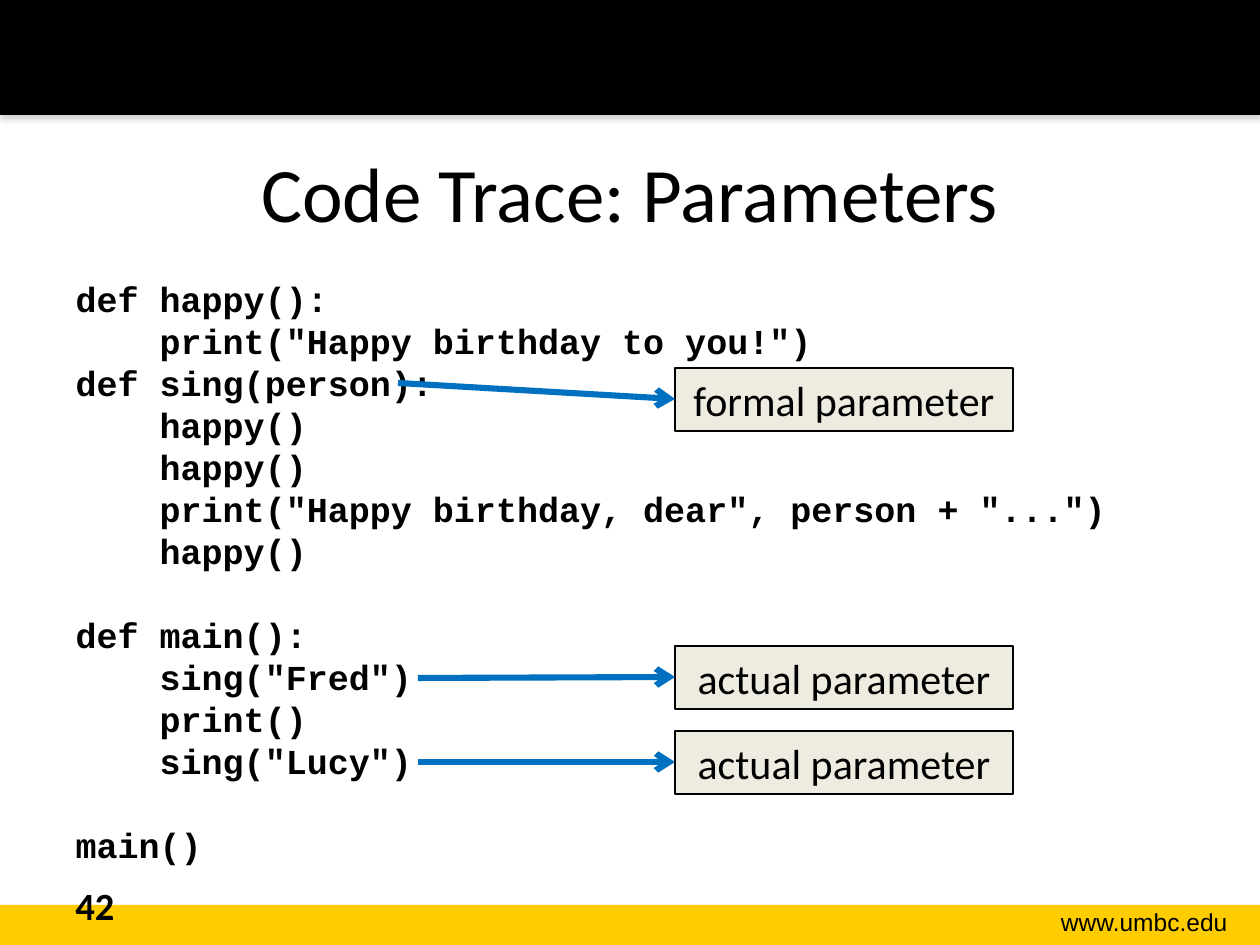
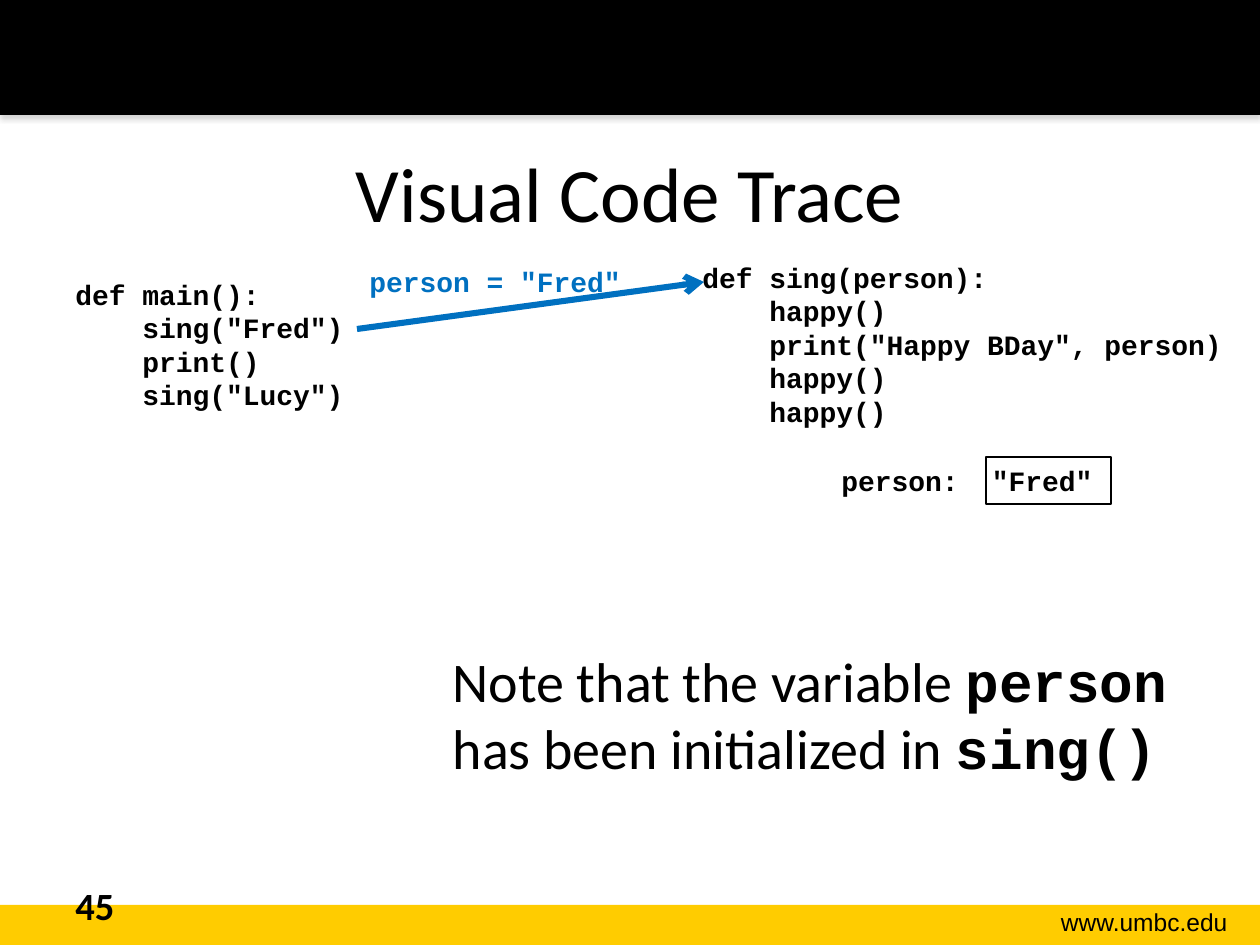
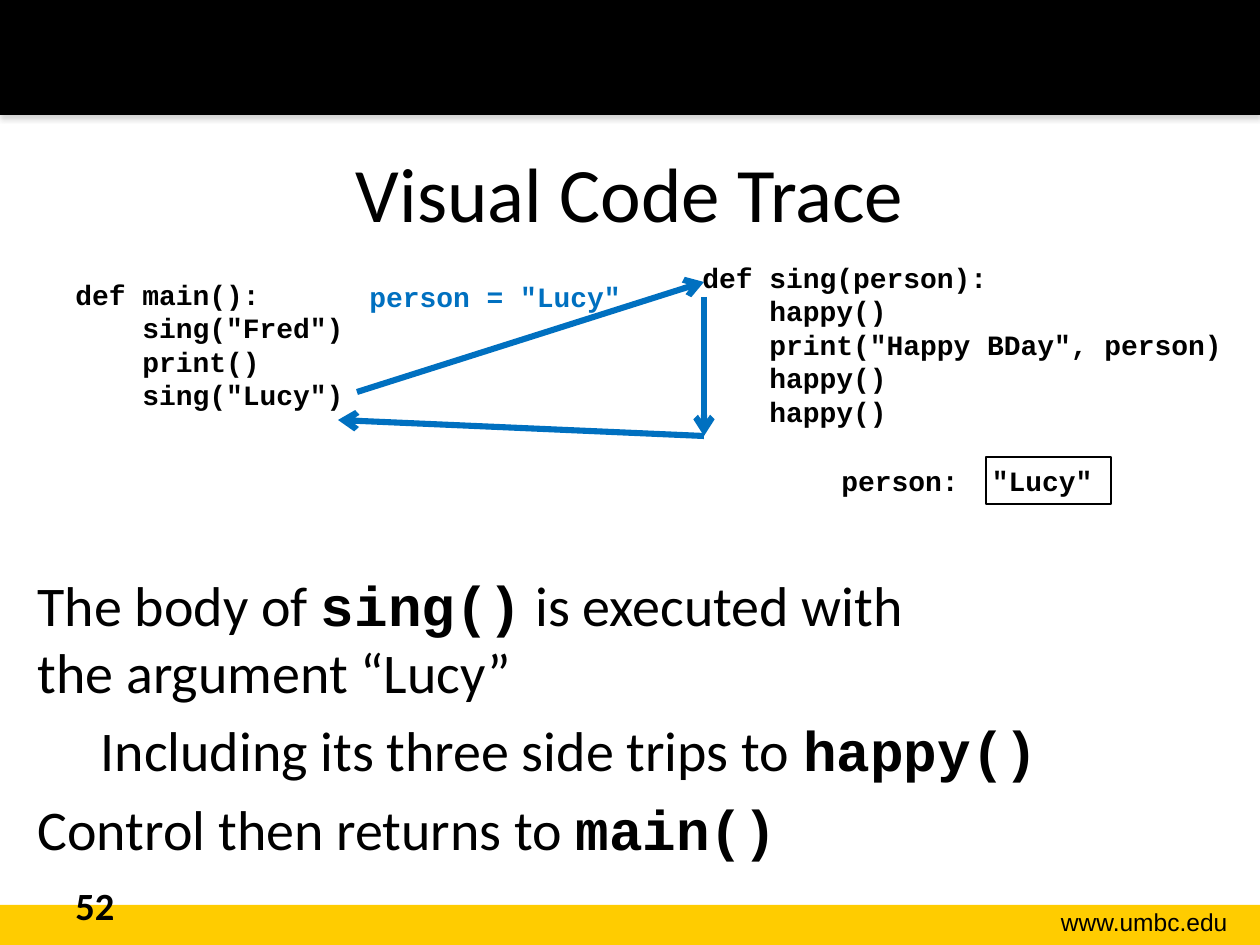
import dataclasses

import lxml.etree
import pptx
import pptx.dml.color
import pptx.enum.shapes
import pptx.enum.text
import pptx.oxml.ns
import pptx.util

ALIGN = pptx.enum.text.PP_ALIGN
ANCHOR = pptx.enum.text.MSO_ANCHOR
RECTANGLE = pptx.enum.shapes.MSO_SHAPE.RECTANGLE

BIRTHDAY_PROGRAM = '''def happy():
    print("Happy birthday to you!")
def sing(person):
    happy()
    happy()
    print("Happy birthday, dear", person + "...")
    happy()

def main():
    sing("Fred")
    print()
    sing("Lucy")

main()'''

MAIN_FUNCTION = '''def main():
    sing("Fred")
    print()
    sing("Lucy")'''

SING_FUNCTION = '''def sing(person):
    happy()
    print("Happy BDay", person)
    happy()
    happy()'''


@dataclasses.dataclass(frozen=True)
class Theme:
    ink: str = "000000"
    gold: str = "FFCC00"
    accent: str = "0070C0"
    label_fill: str = "EEECE1"
    shadow: str = "808080"
    text_font: str = "Calibri"
    code_font: str = "Courier New"
    footer_font: str = "Arial"
    title_size: int = 44
    body_size: int = 32
    label_size: int = 24
    number_size: int = 22
    program_size: int = 20
    code_size: int = 16
    footer_size: int = 14
    outline: float = 0.75
    arrow: float = 3.5


def px(length):
    return pptx.util.Emu(round(length * 914400 / 126))


def rgb(colour):
    return pptx.dml.color.RGBColor.from_string(colour)


def add_xml(parent, tag, **attributes):
    return lxml.etree.SubElement(parent, pptx.oxml.ns.qn(tag), attributes)


class Deck:
    """Draws the slides of a code trace in one shared style."""

    def __init__(self, theme):
        self.theme = theme
        self.presentation = pptx.Presentation()
        self.presentation.slide_width = px(1260)
        self.presentation.slide_height = px(945)
        self.slide = None

    def new_slide(self, title, number):
        first = self.slide is None
        layout = self.presentation.slide_layouts[1]
        self.slide = self.presentation.slides.add_slide(layout)
        if first:
            self.fill_master()
        heading = self.slide.shapes.title
        self.place(heading, 63, 113, 1134, 158)
        heading.text_frame.vertical_anchor = ANCHOR.MIDDLE
        heading.text_frame.text = title
        self.style(heading.text_frame.paragraphs[0], self.theme.title_size, align=ALIGN.CENTER)
        page = self.text_box(63, 876, 294, 50, str(number))
        self.style(page.paragraphs[0], self.theme.number_size, bold=True)

    def fill_master(self):
        theme = self.theme
        gold_band = self.rectangle(0, 905, 1260, 40, theme.gold)
        black_band = self.rectangle(0, 0, 1260, 115, theme.ink)
        effects = black_band.element.spPr.find(pptx.oxml.ns.qn("a:effectLst"))
        shadow = add_xml(effects, "a:outerShdw", blurRad="40000", dist="23000",
                         dir="5400000", rotWithShape="0")
        add_xml(add_xml(shadow, "a:srgbClr", val=theme.shadow), "a:alpha", val="35000")
        address = self.slide.shapes.add_textbox(px(989), px(901), px(251), px(43))
        address.text_frame.word_wrap = True
        address.text_frame.text = "www.umbc.edu"
        self.style(address.text_frame.paragraphs[0], theme.footer_size,
                   theme.footer_font, align=ALIGN.RIGHT)
        tree = self.presentation.slide_master.shapes.element
        for position, part in enumerate((gold_band, black_band, address), 2):
            part.element.nvSpPr.cNvPr.id += 100
            tree.insert(position, part.element)

    def place(self, holder, left, top, width, height):
        holder.left, holder.top = px(left), px(top)
        holder.width, holder.height = px(width), px(height)
        holder.text_frame.word_wrap = True
        holder.text_frame.auto_size = pptx.enum.text.MSO_AUTO_SIZE.NONE

    def style(self, paragraph, size, font=None, bold=False, colour=None, align=ALIGN.LEFT):
        paragraph.alignment = align
        paragraph.font.size = pptx.util.Pt(size)
        paragraph.font.name = font or self.theme.text_font
        paragraph.font.bold = bold
        paragraph.font.color.rgb = rgb(colour or self.theme.ink)

    def text_box(self, left, top, width, height, text=""):
        frame = self.slide.shapes.add_textbox(px(left), px(top), px(width), px(height)).text_frame
        frame.word_wrap = True
        frame.text = text
        return frame

    def rectangle(self, left, top, width, height, fill=None, outline=None):
        shape = self.slide.shapes.add_shape(RECTANGLE, px(left), px(top), px(width), px(height))
        shape.shadow.inherit = False
        if fill:
            shape.fill.solid()
            shape.fill.fore_color.rgb = rgb(fill)
        else:
            shape.fill.background()
        if outline:
            shape.line.color.rgb = rgb(outline)
            shape.line.width = pptx.util.Pt(self.theme.outline)
        else:
            shape.line.fill.background()
        return shape

    def body(self, left, top, width, height):
        holder = self.slide.placeholders[1]
        self.place(holder, left, top, width, height)
        return holder.text_frame

    def unbullet(self, paragraph, margin=0):
        properties = paragraph._p.get_or_add_pPr()
        properties.set("marL", str(px(margin)))
        properties.set("indent", "0")
        add_xml(properties, "a:buNone")

    def code(self, frame, source, size, colour=None):
        frame.text = source.replace("\n\n", "\n")
        block_starts = {block.split("\n")[0] for block in source.split("\n\n")[1:]}
        for paragraph in frame.paragraphs:
            self.unbullet(paragraph)
            starts_block = paragraph.text in block_starts
            paragraph.space_before = pptx.util.Pt(size * 1.2 if starts_block else 0)
            self.style(paragraph, size, self.theme.code_font, True, colour)

    def notes(self, frame, *lines):
        """Write (text, margin) lines, where backticks enclose code."""
        size = self.theme.body_size
        for index, (text, margin) in enumerate(lines):
            paragraph = frame.add_paragraph() if index else frame.paragraphs[0]
            self.unbullet(paragraph, margin)
            paragraph.space_before = pptx.util.Pt(size * 0.2 if index else 0)
            self.style(paragraph, size)
            for part, words in enumerate(text.split("`")):
                for row, segment in enumerate(words.split("\n")):
                    if row:
                        paragraph.add_line_break()
                    if segment:
                        run = paragraph.add_run()
                        run.text = segment
                        if part % 2:
                            run.font.name = self.theme.code_font
                            run.font.bold = True

    def label(self, top, text):
        box = self.rectangle(675, top, 338, 63, self.theme.label_fill, self.theme.ink)
        box.text_frame.text = text
        self.style(box.text_frame.paragraphs[0], self.theme.label_size, align=ALIGN.CENTER)

    def arrow(self, start, end):
        connector = self.slide.shapes.add_connector(
            pptx.enum.shapes.MSO_CONNECTOR.STRAIGHT, *map(px, start + end))
        connector.line.color.rgb = rgb(self.theme.accent)
        connector.line.width = pptx.util.Pt(self.theme.arrow)
        add_xml(connector.get_or_add_ln(), "a:tailEnd", type="arrow")
        add_xml(connector.element.spPr, "a:effectLst")

    def call_trace(self, argument, assignment_top, call_y):
        size = self.theme.code_size
        self.code(self.text_box(63, 271, 353, 149), MAIN_FUNCTION, size)
        self.code(self.text_box(690, 254, 560, 183), SING_FUNCTION, size)
        self.code(self.text_box(357, assignment_top, 282, 47),
                  f"person = {argument}", size, self.theme.accent)
        self.arrow((357, call_y), (704, 282))
        self.code(self.text_box(829, 457, 150, 47), "person:", size)
        value = self.rectangle(986, 457, 125, 47, outline=self.theme.ink).text_frame
        value.margin_left = px(6)
        value.vertical_anchor = ANCHOR.TOP
        self.code(value, argument, size)


def main():
    theme = Theme()
    deck = Deck(theme)

    deck.new_slide("Code Trace: Parameters", 42)
    deck.code(deck.body(63, 271, 1134, 573), BIRTHDAY_PROGRAM, theme.program_size)
    for top, kind, start in (
        (646, "actual", (418, 678)),
        (731, "actual", (418, 762)),
        (368, "formal", (398, 383)),
    ):
        deck.label(top, f"{kind} parameter")
        deck.arrow(start, (675, top + 31))

    deck.new_slide("Visual Code Trace", 45)
    deck.call_trace('"Fred"', 258, 329)
    deck.notes(deck.body(440, 640, 757, 204),
               ("Note that the variable `person`\nhas been initialized in `sing()`", 0))

    deck.new_slide("Visual Code Trace", 52)
    deck.call_trace('"Lucy"', 273, 392)
    deck.notes(deck.body(25, 564, 1128, 311),
               ("The body of `sing()` is executed with\nthe argument “Lucy”", 0),
               ("Including its three side trips to `happy()`", 63),
               ("Control then returns to `main()`", 0))
    deck.arrow((704, 297), (704, 436))
    deck.arrow((704, 436), (338, 420))

    deck.presentation.save("out.pptx")


if __name__ == "__main__":
    main()
